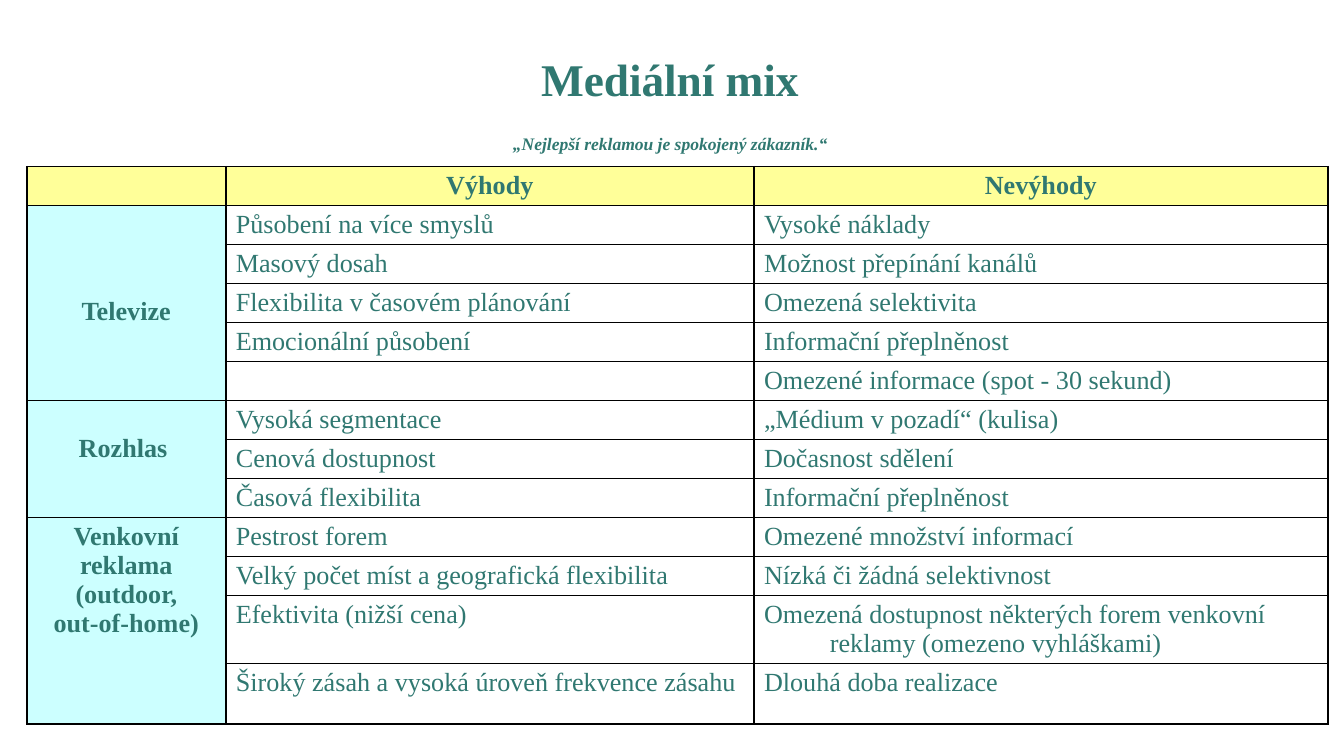
from lxml import etree
from pptx import Presentation, util as u
from pptx.dml.color import RGBColor
from pptx.enum import text
from pptx.oxml import ns

TITLE = "Mediální mix"
MOTTO = "„Nejlepší reklamou je spokojený zákazník.“"
HEADINGS = ("", "Výhody", "Nevýhody")
MEDIA = [
    (["Televize"], 3, [
        ("Působení na více smyslů", "Vysoké náklady"),
        ("Masový dosah", "Možnost přepínání kanálů"),
        ("Flexibilita v\u00a0časovém plánování", "Omezená selektivita"),
        ("Emocionální působení", "Informační přeplněnost"),
        ("", "Omezené informace (spot - 30 sekund)"),
    ]),
    (["Rozhlas "], 1, [
        ("Vysoká segmentace", "„Médium v\u00a0pozadí“ (kulisa)"),
        ("Cenová dostupnost", "Dočasnost sdělení"),
        ("Časová flexibilita", "Informační přeplněnost"),
    ]),
    (["Venkovní", "reklama", "(outdoor,", "out-of-home)"], 0, [
        ("Pestrost forem", "Omezené množství informací"),
        ("Velký počet míst a geografická flexibilita", "Nízká či žádná selektivnost"),
        ("Efektivita (nižší cena)",
         "Omezená dostupnost některých forem venkovní reklamy (omezeno vyhláškami)"),
        ("Široký zásah a vysoká úroveň frekvence zásahu", "Dlouhá doba realizace"),
    ]),
]
COLORS = {"text": "307871", "heading": "FFFF99", "medium": "CCFFFF", "border": "000000"}
FONT = "Times New Roman"
COLUMNS = (1.48, 3.93, 4.27)
ROWS = [0.29] * 11 + [0.5, 0.45]
LINE, INSET = u.Pt(15.5), u.Pt(2.7)
HANG = u.Inches(0.49)


def style(paragraph, size, bold, align=text.PP_ALIGN.CENTER):
    paragraph.alignment = align
    font = paragraph.font
    font.name, font.size, font.bold = FONT, u.Pt(size), bold
    font.color.rgb = RGBColor.from_string(COLORS["text"])


def add_borders(cell):
    properties = cell._tc.get_or_add_tcPr()
    for side in "LRTB":
        line = etree.SubElement(properties, ns.qn(f"a:ln{side}"), w=str(u.Pt(1)))
        fill = etree.SubElement(line, ns.qn("a:solidFill"))
        etree.SubElement(fill, ns.qn("a:srgbClr"), val=COLORS["border"])


def prepare(cell, color):
    add_borders(cell)
    cell.margin_left = cell.margin_right = 2 * INSET
    cell.margin_top = cell.margin_bottom = INSET
    if color:
        cell.fill.solid()
        cell.fill.fore_color.rgb = RGBColor.from_string(COLORS[color])
    else:
        cell.fill.background()
    paragraph = cell.text_frame.paragraphs[0]
    ending = etree.SubElement(paragraph._p, ns.qn("a:endParaRPr"), sz="1400")
    etree.SubElement(ending, ns.qn("a:latin"), typeface=FONT)


def write(cell, lines, bold, align=text.PP_ALIGN.CENTER):
    cell.text = "\n".join(lines)
    for paragraph in cell.text_frame.paragraphs:
        style(paragraph, 14, bold, align)
        if align == text.PP_ALIGN.LEFT:
            properties = paragraph._p.get_or_add_pPr()
            properties.set("marL", str(HANG))
            properties.set("indent", str(-HANG))


def add_title(slide):
    title = slide.shapes.title
    title.left, title.top, title.width, title.height = map(u.Inches, (2.05, 0.33, 5.87, 0.73))
    frame = title.text_frame
    frame.auto_size = text.MSO_AUTO_SIZE.NONE
    frame.vertical_anchor = text.MSO_ANCHOR.TOP
    frame.text = f"{TITLE}\v "
    paragraph = frame.paragraphs[0]
    style(paragraph, 24.3, True)
    paragraph.space_before = u.Pt(0)
    motto = paragraph.add_run()
    motto.text = MOTTO
    motto.font.size, motto.font.italic = u.Pt(9.4), True
    paragraph.add_run().text = " "


def add_media_table(slide):
    table = slide.shapes.add_table(
        len(ROWS), len(COLUMNS), u.Inches(0.2), u.Inches(1.24),
        u.Inches(sum(COLUMNS)), u.Inches(sum(ROWS))).table
    table.first_row = table.horz_banding = False
    for column, width in zip(table.columns, COLUMNS):
        column.width = u.Inches(width)
    for index, (row, height) in enumerate(zip(table.rows, ROWS)):
        row.height = u.Inches(height)
        for position, cell in enumerate(row.cells):
            prepare(cell, "heading" if index == 0 else "medium" if position == 0 else None)

    for position, heading in enumerate(HEADINGS):
        if heading:
            write(table.cell(0, position), [heading], True)
    first = 1
    for label, lines_above, traits in MEDIA:
        medium = table.cell(first, 0)
        medium.merge(table.cell(first + len(traits) - 1, 0))
        write(medium, label, True)
        medium.margin_top = INSET + lines_above * LINE
        for index, pair in enumerate(traits, first):
            for position, trait in enumerate(pair, 1):
                if trait:
                    write(table.cell(index, position), [trait], False, text.PP_ALIGN.LEFT)
        first += len(traits)


def main():
    presentation = Presentation()
    presentation.slide_width = u.Inches(10)
    presentation.slide_height = presentation.slide_width * 9 // 16
    slide = presentation.slides.add_slide(presentation.slide_layouts.get_by_name("Title Only"))
    add_title(slide)
    add_media_table(slide)
    presentation.save("out.pptx")


if __name__ == "__main__":
    main()
